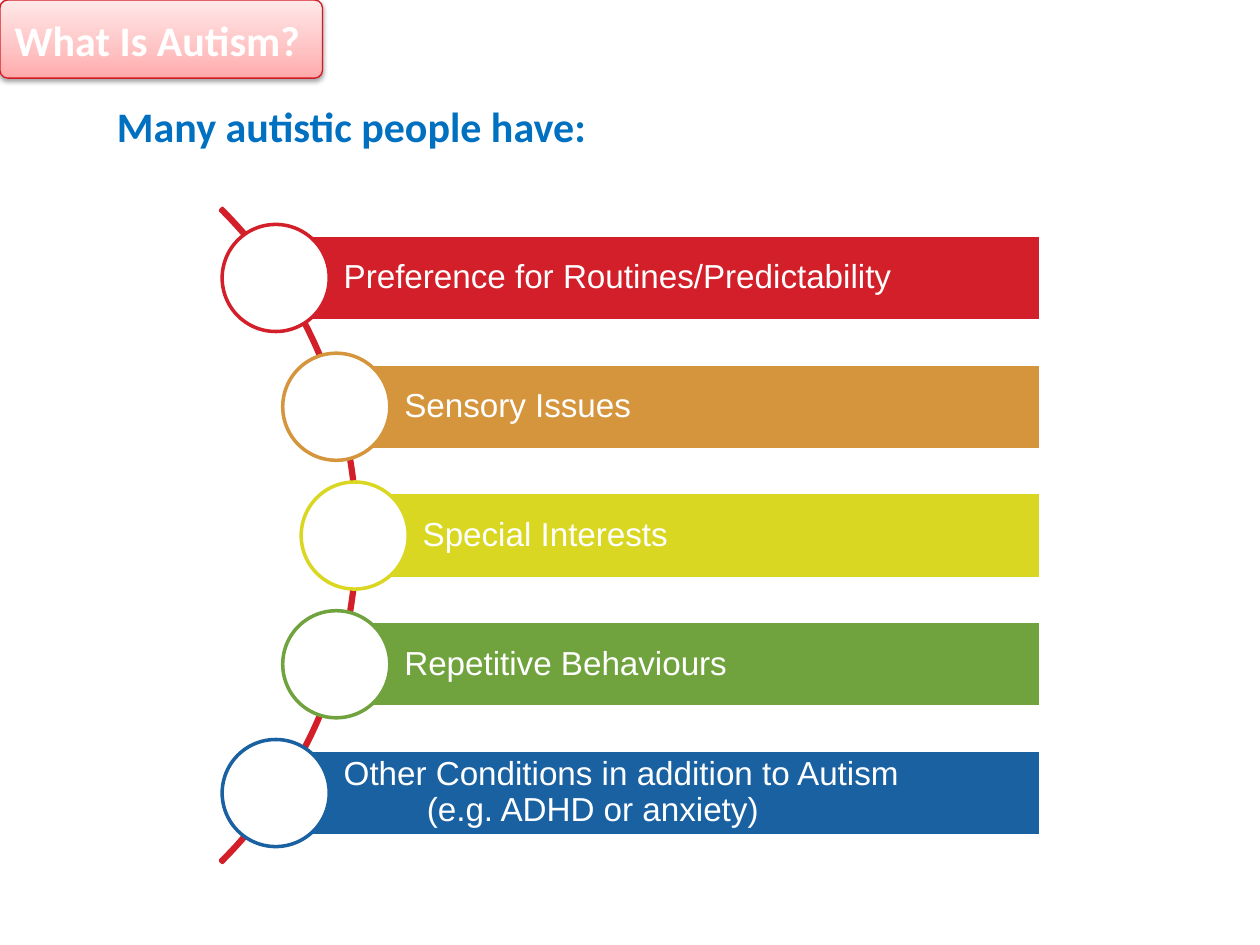
import copy
import math
from typing import Any, NamedTuple

import pptx
import pptx.dml.color
import pptx.enum.shapes
import pptx.enum.text
import pptx.oxml
import pptx.oxml.ns
import pptx.util

Pt = pptx.util.Pt
Kind = pptx.enum.shapes.MSO_SHAPE
Anchor = pptx.enum.text.MSO_ANCHOR
Align = pptx.enum.text.PP_ALIGN

# Grid of 100 columns and 75 rows
CELL = pptx.util.Inches(0.1)
COLS, ROWS = 100, 75

HEX = {
    "white": "FFFFFF", "red": "D31F29", "orange": "D5953C", "yellow": "D9D721",
    "green": "70A33E", "blue": "1A61A2", "head": "0070C0", "edge": "D31A24",
}
BLUSH = [(0, "FFA9AA"), (0.35, "FFC2C3"), (1, "FFE8E8")]
BOLD = {"name": "Calibri", "size": Pt(24), "bold": True}
PLAIN = {"name": "Arial", "size": Pt(19)}


class Box(NamedTuple):
    left: float
    top: float
    width: float
    height: float


class Item(NamedTuple):
    tone: str
    lines: list[str]


ITEMS = [
    Item("red", ["Preference for Routines/Predictability"]),
    Item("orange", ["Sensory Issues"]),
    Item("yellow", ["Special Interests"]),
    Item("green", ["Repetitive Behaviours"]),
    Item("blue", ["Other Conditions in addition to Autism", "(e.g. ADHD or anxiety)"]),
]

# Arc centre and radius, row pitch and sizes, in grid cells
MID_X, MID_Y = -8.3, 42.5
ARC, TRACK = 36.7, 36.45
PITCH, BAR, DISC, RIGHT = 10.22, 6.8, 8.5, 82.6
INDENT = 6.6


def cells(count: float) -> int:
    return round(count * CELL)


def color(name: str) -> pptx.dml.color.RGBColor:
    return pptx.dml.color.RGBColor.from_string(HEX.get(name, name))


def apply(target: Any, values: dict[str, Any]) -> None:
    for key, value in values.items():
        setattr(target, key, value)


def draw(slide: Any, kind: Any, box: Box, fill: str | None, line: str,
         width: float = 2) -> Any:
    shape = slide.shapes.add_shape(kind, *map(cells, box))
    shape.shadow.inherit = False
    if fill:
        shape.fill.solid()
        shape.fill.fore_color.rgb = color(fill)
    else:
        shape.fill.background()
    shape.line.color.rgb = color(line)
    shape.line.width = Pt(width)
    return shape


def write(shape: Any, lines: list[str], font: dict[str, Any], tone: str,
          frame: dict[str, Any], space: float = 1) -> None:
    text = shape.text_frame
    apply(text, {"word_wrap": True, **frame})
    text.text = "\n".join(lines)
    for index, para in enumerate(text.paragraphs):
        apply(para, {"alignment": Align.LEFT, "line_spacing": space})
        if index:
            para._p.get_or_add_pPr().set("marL", str(cells(INDENT)))
        apply(para.font, font)
        para.font.color.rgb = color(tone)


def shade(shape: Any) -> None:
    """Three-stop gradient, light at the top, and a soft shadow below."""
    shape.fill.gradient()
    shape.fill.gradient_angle = 90
    stops = shape._element.spPr.find(".//" + pptx.oxml.ns.qn("a:gsLst"))
    stops.append(copy.deepcopy(stops[-1]))
    for node, stop, (place, tone) in zip(stops, shape.fill.gradient_stops, BLUSH):
        stop.color.rgb = color(tone)
        node.set("pos", str(round(place * 100000)))
    effects = shape._element.spPr.find(pptx.oxml.ns.qn("a:effectLst"))
    effects.append(pptx.oxml.parse_xml(
        f'<a:outerShdw {pptx.oxml.ns.nsdecls("a")} blurRad="{Pt(3.1)}" '
        f'dist="{Pt(1.6)}" dir="5400000" rotWithShape="0">'
        '<a:srgbClr val="000000"><a:alpha val="38000"/></a:srgbClr></a:outerShdw>'))


def row(slide: Any, index: int, item: Item) -> None:
    drop = (index - (len(ITEMS) - 1) / 2) * PITCH
    x, y = MID_X + math.sqrt(TRACK ** 2 - drop ** 2), MID_Y + drop
    bar = draw(slide, Kind.RECTANGLE, Box(x, y - BAR / 2, RIGHT - x, BAR),
               item.tone, "white")
    inset = cells(0.5)
    frame = {"vertical_anchor": Anchor.MIDDLE, "margin_left": cells(5.4),
             "margin_right": inset, "margin_top": inset, "margin_bottom": inset}
    write(bar, item.lines, PLAIN, "white", frame, 0.9)
    draw(slide, Kind.OVAL, Box(x - DISC / 2, y - DISC / 2, DISC, DISC),
         "white", item.tone)


def main() -> None:
    deck = pptx.Presentation()
    apply(deck, {"slide_width": cells(COLS), "slide_height": cells(ROWS)})
    slide = deck.slides.add_slide(deck.slide_layouts[6])

    # Curved track, from -45 to 45 degrees
    track = draw(slide, Kind.BLOCK_ARC,
                 Box(MID_X - ARC, MID_Y - ARC, 2 * ARC, 2 * ARC), None, "red")
    for index, value in enumerate((189, 27, 0.003)):
        track.adjustments[index] = value

    # Bars with their discs
    for index, item in enumerate(ITEMS):
        row(slide, index, item)

    # Heading
    head = slide.shapes.add_textbox(*map(cells, Box(8.3, 7.5, 83.5, 5)))
    write(head, ["Many autistic people have:"], BOLD, "head", {})

    # Title tab
    tab = draw(slide, Kind.ROUNDED_RECTANGLE, Box(0, 0, 25.6, 6.2),
               "white", "edge", 0.75)
    tab.adjustments[0] = 0.1
    shade(tab)
    write(tab, ["What Is Autism?"], BOLD, "white",
          {"vertical_anchor": Anchor.TOP, "margin_top": cells(1),
           "margin_left": cells(1), "margin_bottom": 0})

    deck.save("out.pptx")


if __name__ == "__main__":
    main()
